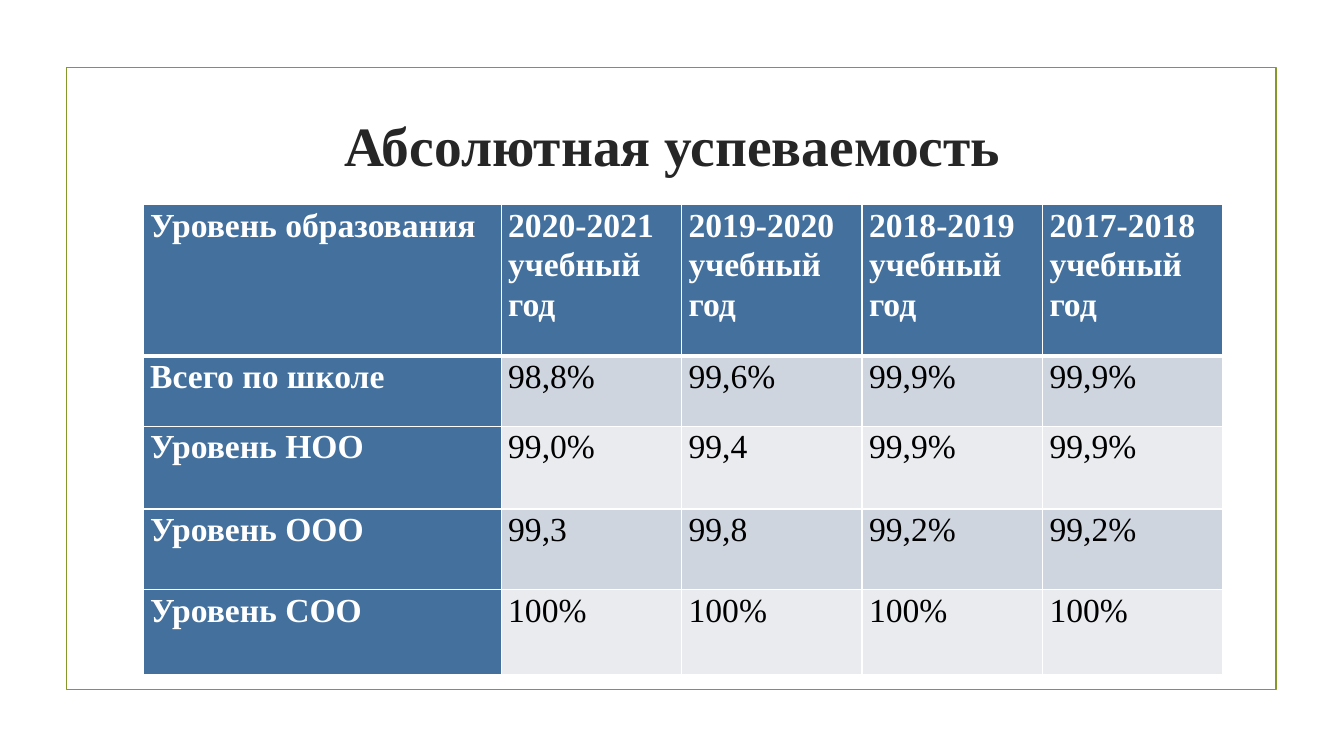
from dataclasses import dataclass

from lxml.etree import SubElement
from pptx import Presentation
from pptx.dml.color import RGBColor
from pptx.enum.shapes import MSO_SHAPE
from pptx.enum.text import MSO_ANCHOR as Anchor, PP_ALIGN as Align
from pptx.oxml.ns import qn
from pptx.util import Inches, Pt

COLORS = {
    "frame": "83992A",
    "title": "262626",
    "head": "44709D",
    "odd": "CFD5DF",
    "even": "E9EBEF",
    "white": "FFFFFF",
    "black": "000000",
}
FONT = "Times New Roman"
YEARS = ["2020-2021", "2019-2020", "2018-2019", "2017-2018"]
COL_WIDTHS = [3.55] + [1.79] * len(YEARS)
HEAD_HEIGHT = 1.5


@dataclass
class Level:
    name: str
    height: float
    rates: list[str]


LEVELS = [
    Level("Всего по школе", 0.7, ["98,8%", "99,6%", "99,9%", "99,9%"]),
    Level("Уровень НОО", 0.82, ["99,0%", "99,4", "99,9%", "99,9%"]),
    Level("Уровень ООО", 0.8, ["99,3", "99,8", "99,2%", "99,2%"]),
    Level("Уровень СОО", 0.84, ["100%"] * len(YEARS)),
]


def color(name: str) -> RGBColor:
    return RGBColor.from_string(COLORS[name])


def style_run(r, text: str, size: float, ink: str, bold: bool) -> None:
    r.text = text
    for key, value in {"name": FONT, "size": Pt(size), "bold": bold}.items():
        setattr(r.font, key, value)
    r.font.color.rgb = color(ink)


def add_borders(cell, widths: dict[str, float]) -> None:
    tc_pr = cell._tc.get_or_add_tcPr()
    for side, width in widths.items():
        ln = SubElement(tc_pr, qn(f"a:ln{side}"), w=str(Pt(width)))
        fill = SubElement(ln, qn("a:solidFill"))
        SubElement(fill, qn("a:srgbClr"), val=COLORS["white"])


def fill_cell(cell, row: int, col: int, lines: list[str]) -> None:
    is_head = row == 0 or col == 0
    margins = {"margin_left": 0.07, "margin_right": 0.07,
               "margin_top": 0, "margin_bottom": 0}
    for key, value in margins.items():
        setattr(cell, key, Inches(value))
    # A thick rule separates the header from the body
    add_borders(cell, {"L": 1, "R": 1, "T": 3 if row == 1 else 1,
                       "B": 3 if row == 0 else 1})
    cell.fill.solid()
    cell.fill.fore_color.rgb = color(
        "head" if is_head else "odd" if row % 2 else "even")
    tf = cell.text_frame
    for i, line in enumerate(lines):
        p = tf.paragraphs[0] if i == 0 else tf.add_paragraph()
        p.line_spacing = 1.07
        style_run(p.add_run(), line, 24, "white" if is_head else "black", is_head)


def add_frame(s) -> None:
    sp = s.shapes.add_shape(MSO_SHAPE.RECTANGLE, Inches(0.66), Inches(0.67),
                            Inches(12), Inches(6.17))
    sp.shadow.inherit = False
    sp.fill.background()
    sp.line.color.rgb = color("frame")
    sp.line.width = Pt(1.25)


def add_title(s, text: str) -> None:
    sp = s.shapes.add_textbox(Inches(1.42), Inches(1.07), Inches(10.5), Inches(0.73))
    tf = sp.text_frame
    for key, value in {"word_wrap": True, "vertical_anchor": Anchor.MIDDLE}.items():
        setattr(tf, key, value)
    p = tf.paragraphs[0]
    p.alignment = Align.CENTER
    style_run(p.add_run(), text, 39.6, "title", True)


def add_rates_table(s) -> None:
    heights = [HEAD_HEIGHT] + [level.height for level in LEVELS]
    rows = [[["Уровень образования"]] + [[year, "учебный год"] for year in YEARS]]
    rows += [[[text] for text in [level.name, *level.rates]] for level in LEVELS]
    table = s.shapes.add_table(
        len(rows), len(COL_WIDTHS), Inches(1.42), Inches(2.03),
        Inches(sum(COL_WIDTHS)), Inches(sum(heights))).table
    for column, width in zip(table.columns, COL_WIDTHS):
        column.width = Inches(width)
    for row, height in zip(table.rows, heights):
        row.height = Inches(height)
    for i, row in enumerate(rows):
        for j, lines in enumerate(row):
            fill_cell(table.cell(i, j), i, j, lines)


def main() -> None:
    prs = Presentation()
    prs.slide_width, prs.slide_height = Inches(13.33), Inches(7.5)
    s = prs.slides.add_slide(prs.slide_layouts[6])
    add_frame(s)
    add_title(s, "Абсолютная успеваемость")
    add_rates_table(s)
    prs.save("out.pptx")


if __name__ == "__main__":
    main()
